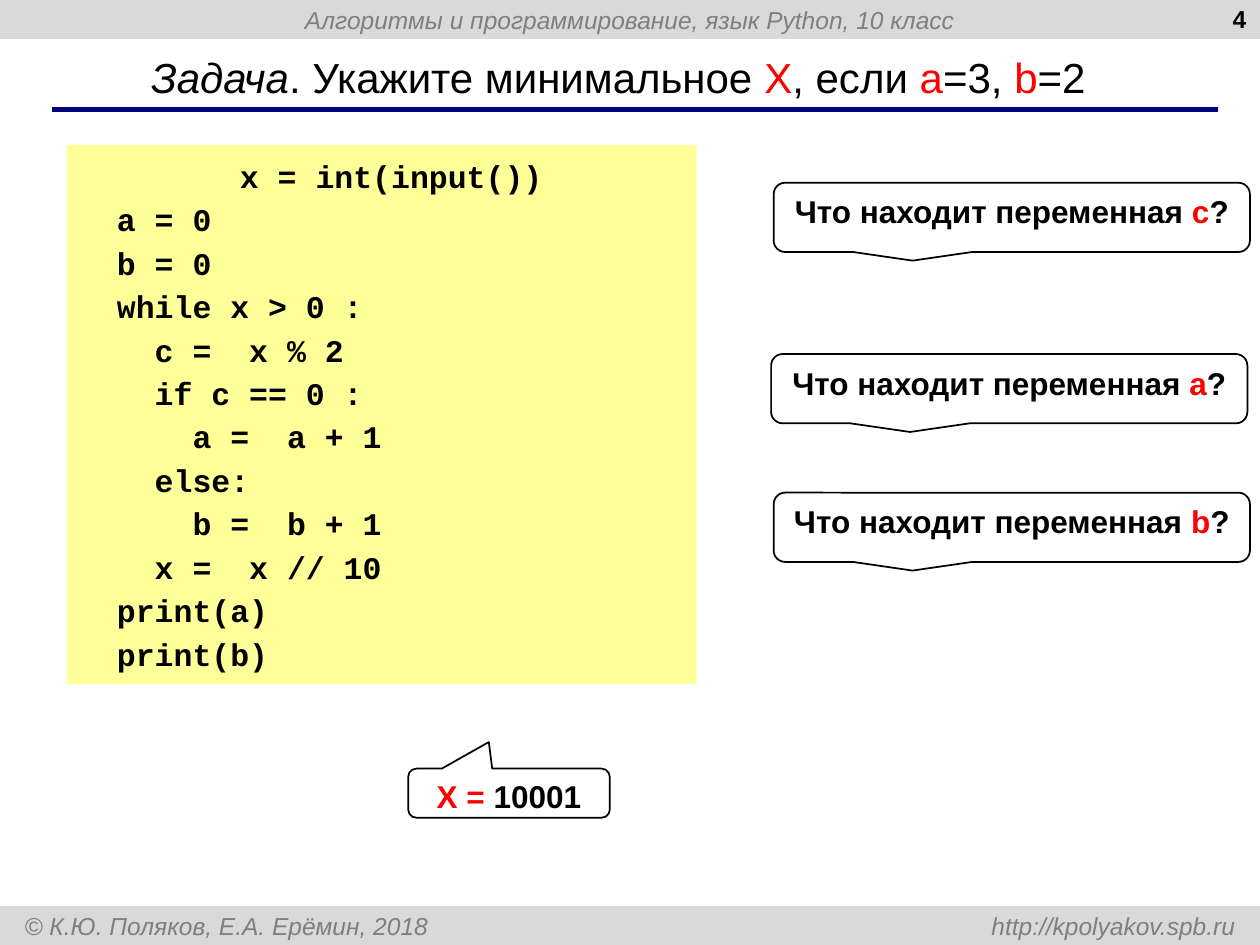
"""Build the programming-task slide with a code listing and callouts."""
from dataclasses import dataclass

from lxml import etree
from pptx import Presentation
from pptx.dml.color import RGBColor
from pptx.enum import shapes, text
from pptx.oxml.ns import qn
from pptx.util import Inches, Pt


@dataclass(frozen=True)
class Theme:
    sans: str = "Arial"
    mono: str = "Courier New"
    small: int = 14
    body: int = 18
    title: int = 24
    black: str = "000000"
    white: str = "FFFFFF"
    red: str = "FF0000"
    grey: str = "7F7F7F"
    band: str = "D9D9D9"
    navy: str = "000080"
    code: str = "FFFF99"


@dataclass(frozen=True)
class Box:
    left: float
    top: float
    width: float
    height: float

    def lengths(self):
        return [Inches(v) for v in (self.left, self.top, self.width, self.height)]


@dataclass(frozen=True)
class Run:
    text: str
    color: str = ""
    italic: bool = False


@dataclass(frozen=True)
class Callout:
    box: Box
    runs: tuple[Run, ...]
    fill: str = ""
    tail: tuple[float, float] | None = None


T = Theme()


def question(left: float, top: float, name: str, fill: str = "") -> Callout:
    runs = (Run("Что находит переменная "), Run(name, T.red), Run("?"))
    return Callout(Box(left, top, 3.78, 0.55), runs, fill)


HEADER = "Алгоритмы и программирование, язык Python, 10 класс"
FOOTER = "© К.Ю. Поляков, Е.А. Ерёмин, 2018 \thttp://kpolyakov.spb.ru"
TITLE = (
    Run("Задача", italic=True), Run(". Укажите минимальное "), Run("Х", T.red),
    Run(", если "), Run("a", T.red), Run("=3, "), Run("b", T.red), Run("=2"),
)
CODE = """ x = int(input())
  a = 0
  b = 0
  while x > 0 :
    c =  x % 2
    if c == 0 :
      a =  a + 1
    else:
      b =  b + 1
    x =  x // 10
  print(a)
  print(b)"""
CALLOUTS = (
    question(6.12, 2.81, "a"),
    Callout(Box(3.24, 6.1, 1.6, 0.39), (Run("X =", T.red), Run(" 10001")), tail=(-0.1, -1.04)),
    question(6.14, 1.45, "c", T.white),
    question(6.14, 3.91, "b"),
)


def write(p, runs, size: int, color: str = T.black, face: str = T.sans, bold: bool = False):
    """Fill a paragraph with runs that share one face, size and weight."""
    p.alignment = p.alignment or text.PP_ALIGN.LEFT
    p.font.name, p.font.size, p.font.bold = face, Pt(size), bold
    p.font.color.rgb = RGBColor.from_string(color)
    for run in runs:
        r = p.add_run()
        r.text = run.text
        if run.color:
            r.font.color.rgb = RGBColor.from_string(run.color)
        if run.italic:
            r.font.italic = True


def add_shape(s, kind, box: Box, fill: str = "", line: str = ""):
    """Add a flat preset shape with top-anchored text."""
    sp = s.shapes.add_shape(kind, *box.lengths())
    sp.shadow.inherit = False
    if fill:
        sp.fill.solid()
        sp.fill.fore_color.rgb = RGBColor.from_string(fill)
    else:
        sp.fill.background()
    if line:
        sp.line.color.rgb = RGBColor.from_string(line)
        sp.line.width = Pt(1)
    else:
        sp.line.fill.background()
    sp.text_frame.vertical_anchor = text.MSO_ANCHOR.TOP
    return sp


def add_band(s, top: float, label: str):
    """Add a grey strip across the slide and return its paragraph."""
    sp = add_shape(s, shapes.MSO_SHAPE.RECTANGLE, Box(0, top, 10, 0.31), T.band)
    sp.text_frame.vertical_anchor = text.MSO_ANCHOR.MIDDLE
    p = sp.text_frame.paragraphs[0]
    write(p, [Run(label)], T.small, T.grey)
    p.font.italic = True
    return p


def add_right_tab(p, position: float):
    """Give a paragraph a right-aligned tab stop."""
    pPr = p._p.get_or_add_pPr()
    tabs = etree.Element(qn("a:tabLst"))
    etree.SubElement(tabs, qn("a:tab"), pos=str(Inches(position)), algn="r")
    pPr.insert(0, tabs)


def add_text(s, box: Box):
    """Add a wrapping text box and return its frame."""
    tf = s.shapes.add_textbox(*box.lengths()).text_frame
    tf.word_wrap = True
    return tf


def add_rule(s):
    """Draw the line below the title."""
    y = Inches(0.87)
    line = s.shapes.add_connector(shapes.MSO_CONNECTOR.STRAIGHT, Inches(0.41), y, Inches(9.67), y)
    line.line.color.rgb = RGBColor.from_string(T.navy)
    line.line.width = Pt(3)
    etree.SubElement(line._element.spPr, qn("a:effectLst"))


def add_code(s):
    """Add the program listing, one paragraph a line."""
    sp = add_shape(s, shapes.MSO_SHAPE.RECTANGLE, Box(0.53, 1.15, 5, 4.28), T.code)
    tf = sp.text_frame
    tf.auto_size = text.MSO_AUTO_SIZE.SHAPE_TO_FIT_TEXT
    for i, line in enumerate(CODE.splitlines()):
        p = tf.add_paragraph() if i else tf.paragraphs[0]
        p.line_spacing = 1.15
        write(p, [Run(line)], T.body, face=T.mono, bold=True)


def add_callout(s, callout: Callout):
    """Draw a speech bubble."""
    kind = shapes.MSO_SHAPE.ROUNDED_RECTANGULAR_CALLOUT
    sp = add_shape(s, kind, callout.box, callout.fill, T.black)
    if callout.tail:
        sp.adjustments[0], sp.adjustments[1] = callout.tail
    write(sp.text_frame.paragraphs[0], callout.runs, T.body, bold=True)


def main():
    prs = Presentation()
    prs.slide_width, prs.slide_height = Inches(10), Inches(7.5)
    s = prs.slides.add_slide(prs.slide_layouts[6])
    add_band(s, 0, HEADER)
    add_right_tab(add_band(s, 7.19, FOOTER), 9.61)
    number = add_text(s, Box(7.66, -0.02, 2.33, 0.52)).paragraphs[0]
    number.alignment = text.PP_ALIGN.RIGHT
    write(number, [Run("4")], T.small, bold=True)
    add_rule(s)
    write(add_text(s, Box(1.1, 0.36, 8.89, 0.51)).paragraphs[0], TITLE, T.title)
    add_code(s)
    for callout in CALLOUTS:
        add_callout(s, callout)
    prs.save("out.pptx")


if __name__ == "__main__":
    main()
